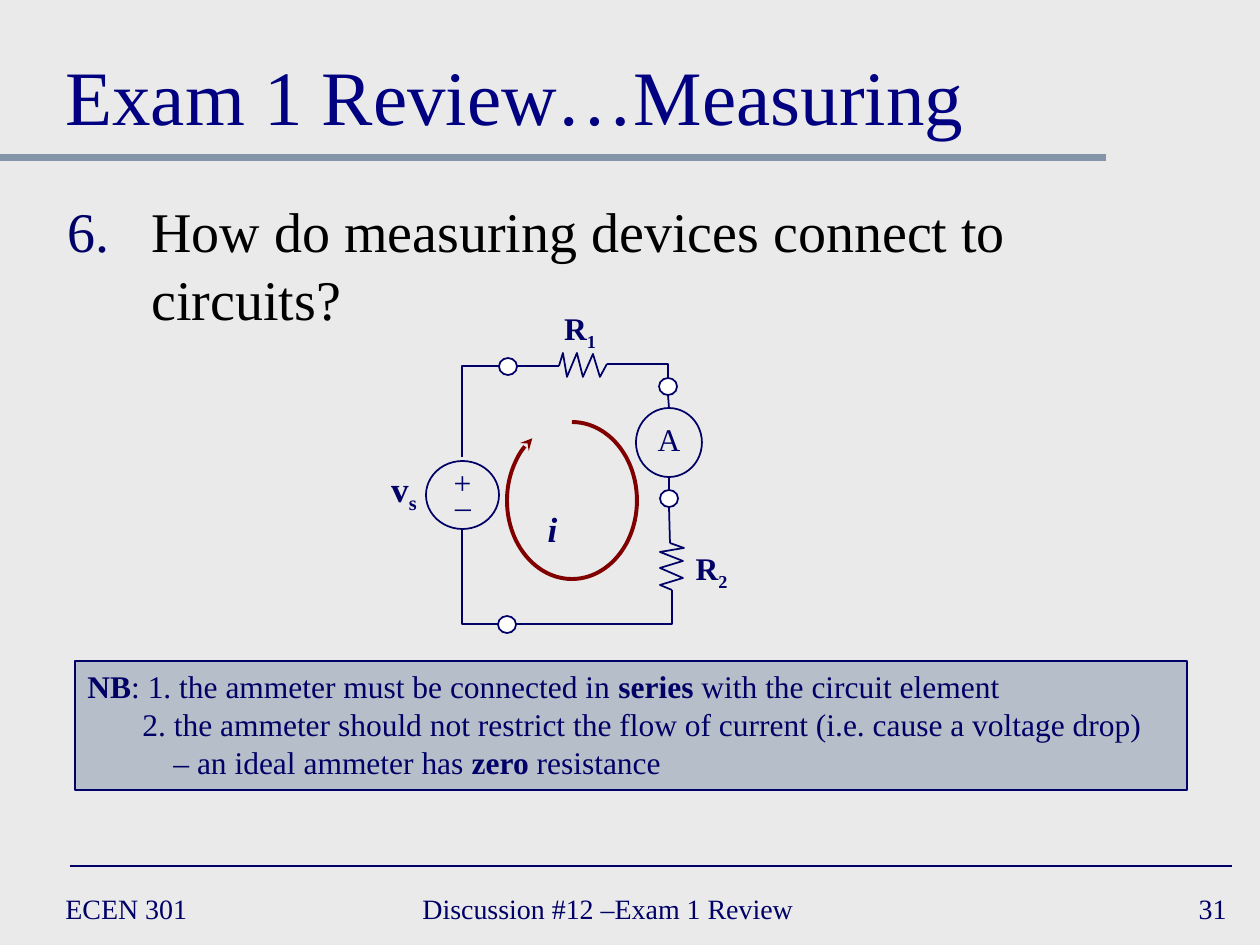
from lxml import etree
from pptx import Presentation
from pptx.dml.color import RGBColor
from pptx.enum.shapes import MSO_CONNECTOR, MSO_SHAPE
from pptx.enum.text import MSO_ANCHOR, PP_ALIGN
from pptx.oxml.ns import qn
from pptx.util import Pt

PX = 914400 / 126
FONT = "Times New Roman"
COLORS = {"bg": "EAEAEA", "navy": "000066", "title": "000080", "black": "000000",
          "slate": "8495A9", "white": "FFFFFF", "loop": "800000"}
STRAIGHT = MSO_CONNECTOR.STRAIGHT
RECTANGLE, OVAL, ARC = MSO_SHAPE.RECTANGLE, MSO_SHAPE.OVAL, MSO_SHAPE.ARC
LEFT, CENTER, RIGHT = PP_ALIGN.LEFT, PP_ALIGN.CENTER, PP_ALIGN.RIGHT
TOP, MIDDLE, BOTTOM = MSO_ANCHOR.TOP, MSO_ANCHOR.MIDDLE, MSO_ANCHOR.BOTTOM


def px(n):
    """Turn px into whole EMU."""
    return round(n * PX)


def rgb(name):
    """Look up a colour by name."""
    return RGBColor.from_string(COLORS[name])


def add_run(p, text, size, color="navy", bold=False, italic=False, sub=False):
    """Append a formatted run to a paragraph."""
    r = p.add_run()
    r.text = text
    f = r.font
    f.name, f.size, f.bold, f.italic = FONT, Pt(size), bold, italic
    f.color.rgb = rgb(color)
    if sub:
        r._r.get_or_add_rPr().set("baseline", "-25000")


def add_text(s, box, align=LEFT, anchor=TOP, wrap=False):
    """Add a text box and return its text frame."""
    tf = s.shapes.add_textbox(*map(px, box)).text_frame
    tf.word_wrap, tf.vertical_anchor = wrap, anchor
    tf.paragraphs[0].alignment = align
    return tf


def add_line(s, x1, y1, x2, y2, color="navy", width=1):
    """Add a straight connector without a shadow."""
    c = s.shapes.add_connector(STRAIGHT, px(x1), px(y1), px(x2), px(y2))
    c.line.color.rgb, c.line.width = rgb(color), Pt(width)
    etree.SubElement(c._element.spPr, qn("a:effectLst"))


def style(sp, fill=None, line="navy", width=1):
    """Set fill and outline and drop the shadow."""
    sp.shadow.inherit = False
    if fill:
        sp.fill.solid()
        sp.fill.fore_color.rgb = rgb(fill)
    else:
        sp.fill.background()
    sp.line.color.rgb, sp.line.width = rgb(line), Pt(width)


def add_path(s, x, y, points):
    """Draw an open polyline with points relative to x, y."""
    pts = [(px(x + a), px(y + b)) for a, b in points]
    fb = s.shapes.build_freeform(*pts[0])
    fb.add_line_segments(pts[1:], close=False)
    style(fb.convert_to_shape())


def add_header(s, x, y, w, h):
    """Place the title and the rule below it."""
    tf = add_text(s, (x + 53, y, w - 105, h - 11), anchor=BOTTOM, wrap=True)
    add_run(tf.paragraphs[0], "Exam 1 Review…Measuring", 44, "title")
    add_line(s, x, y + h, x + 1106, y + h, "slate", 4)


def add_question(s, x, y, w, h):
    """Place the numbered question."""
    tf = add_text(s, (x, y, w, h), wrap=True)
    tf.margin_top = px(13)
    p = tf.paragraphs[0]
    pPr = p._p.get_or_add_pPr()
    pPr.set("marL", str(px(84)))
    pPr.set("indent", str(-px(84)))
    clr = etree.SubElement(pPr, qn("a:buClr"))
    etree.SubElement(clr, qn("a:srgbClr"), val=COLORS["navy"])
    etree.SubElement(pPr, qn("a:buFont"), typeface=FONT)
    etree.SubElement(pPr, qn("a:buAutoNum"), type="arabicPeriod", startAt="6")
    add_run(p, "How do measuring devices connect to circuits?", 32, "black")


def add_circuit(s, x, y):
    """Draw the series circuit with its ammeter and current loop."""
    wires = [
        [(120, 324), (84, 324), (84, 229)],
        [(84, 157), (84, 66), (121, 66)],
        [(138, 324), (294, 324), (294, 290)],
        [(290, 78), (290, 64), (229, 64)],
    ]
    resistors = [
        [(181, 66), (185, 53), (189, 77), (199, 53),
         (205, 77), (215, 54), (222, 77), (229, 64)],
        [(292, 243), (306, 248), (282, 252), (305, 261),
         (282, 268), (305, 278), (282, 285), (294, 290)],
    ]
    for points in wires + resistors:
        add_path(s, x, y, points)
    for x1, y1, x2, y2 in [(139, 66, 181, 66), (290, 95, 291, 108),
                           (291, 177, 291, 190), (291, 207, 292, 243)]:
        add_line(s, x + x1, y + y1, x + x2, y + y2)

    terminals = [(121, 58), (120, 316), (281, 78), (282, 190)]
    ovals = [(a, b, 18, 17, "white") for a, b in terminals]
    ovals += [(48, 161, 73, 68, None), (258, 108, 66, 69, None)]
    for a, b, w, h, fill in ovals:
        style(s.shapes.add_shape(OVAL, px(x + a), px(y + b), px(w), px(h)), fill)

    loop = s.shapes.add_shape(ARC, px(x + 129), px(y + 122), px(130), px(157))
    loop.adjustments[0], loop.adjustments[1] = 162, 142.5
    style(loop, line="loop", width=2.25)
    etree.SubElement(loop.line._get_or_add_ln(), qn("a:tailEnd"), type="stealth")

    labels = [
        (170, 3, 64, 50, "R", "1", 18, True, False),
        (304, 243, 59, 50, "R", "2", 18, True, False),
        (0, 161, 52, 54, "v", "s", 20, True, False),
        (157, 201, 35, 54, "i", "", 20, True, True),
        (63, 157, 43, 50, "+", "", 18, False, False),
        (64, 170, 42, 50, "_", "", 18, False, False),
        (267, 114, 48, 50, "A", "", 18, False, False),
    ]
    for a, b, w, h, text, sub, size, bold, italic in labels:
        p = add_text(s, (x + a, y + b, w, h), CENTER).paragraphs[0]
        add_run(p, text, size, bold=bold, italic=italic)
        if sub:
            add_run(p, sub, size, bold=bold, sub=True)


def add_note(s, x, y, w, h):
    """Place the shaded note on ammeters."""
    sp = s.shapes.add_shape(RECTANGLE, px(x), px(y), px(w), px(h))
    style(sp, "slate")
    clr = sp._element.spPr.find(qn("a:solidFill")).find(qn("a:srgbClr"))
    etree.SubElement(clr, qn("a:alpha"), val="50000")
    tf = sp.text_frame
    tf.word_wrap, tf.vertical_anchor = True, TOP
    lines = [
        (0, [("NB", True), (": 1. the ammeter must be connected in ", False),
             ("series", True), (" with the circuit element", False)]),
        (55, [("2. the ammeter should not restrict the flow of current "
               "(i.e. cause a voltage drop)", False)]),
        (86, [("– an ideal ammeter has ", False), ("zero ", True),
              ("resistance", False)]),
    ]
    for i, (indent, runs) in enumerate(lines):
        p = tf.add_paragraph() if i else tf.paragraphs[0]
        p.alignment = LEFT
        p._p.get_or_add_pPr().set("marL", str(px(indent)))
        for text, bold in runs:
            add_run(p, text, 18, bold=bold)


def add_footer(s, x, y, w, h):
    """Place the footer rule and its three texts."""
    add_line(s, x + 17, y, x + w, y)
    for left, width, text, align in [
            (0, 273, "ECEN 301", LEFT),
            (357, 483, "Discussion #12 –Exam 1 Review", LEFT),
            (924, 262, "31", RIGHT)]:
        tf = add_text(s, (x + left, y + 16, width, h - 16), align, MIDDLE)
        add_run(tf.paragraphs[0], text, 16)


def main():
    """Build the slide and save it."""
    prs = Presentation()
    prs.slide_width, prs.slide_height = px(1260), px(945)
    s = prs.slides.add_slide(prs.slide_layouts[6])
    s.background.fill.solid()
    s.background.fill.fore_color.rgb = rgb("bg")
    add_header(s, 0, 21, 1260, 137)
    add_question(s, 55, 184, 1152, 194)
    add_circuit(s, 378, 300)
    add_note(s, 75, 661, 1112, 129)
    add_footer(s, 53, 866, 1179, 69)
    prs.save("out.pptx")


if __name__ == "__main__":
    main()
